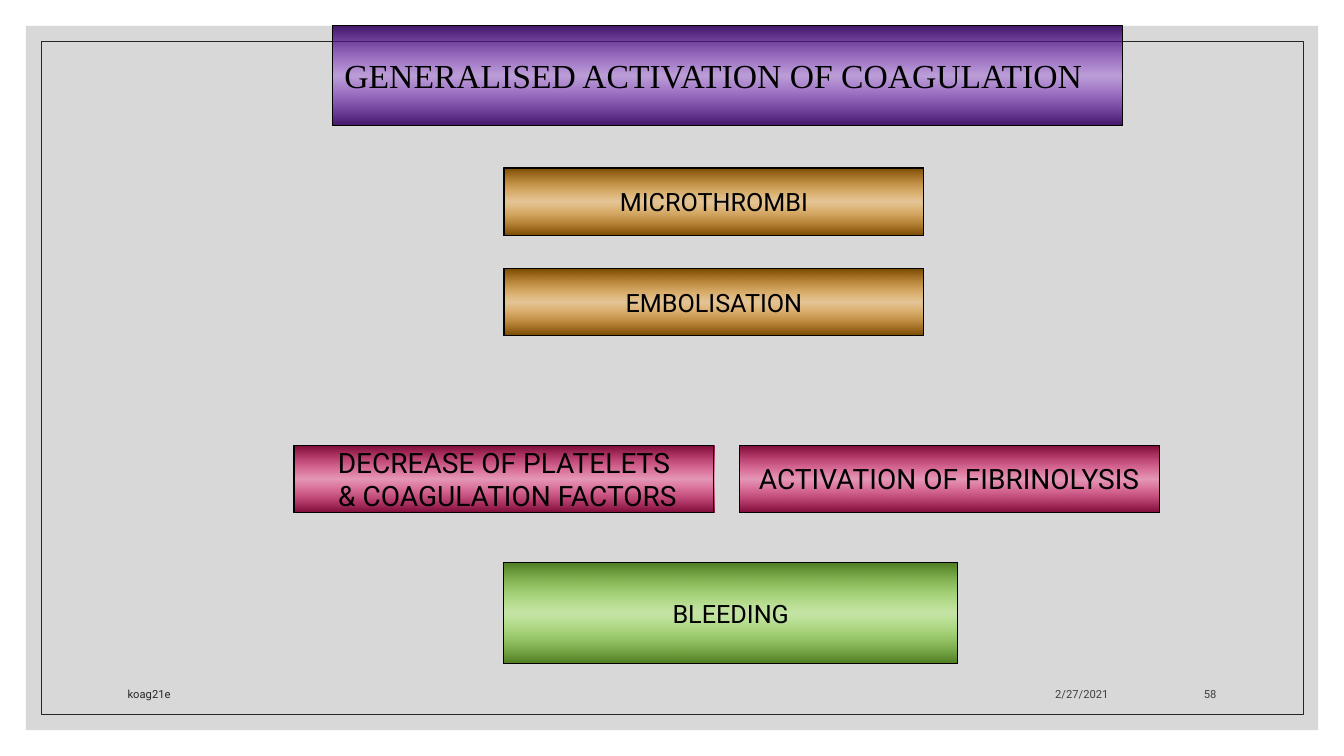
from dataclasses import dataclass

from lxml.etree import SubElement
from pptx import Presentation
from pptx.dml.color import RGBColor
from pptx.enum.shapes import MSO_SHAPE
from pptx.enum.text import MSO_ANCHOR, PP_ALIGN
from pptx.oxml.ns import qn
from pptx.shapes.autoshape import Shape
from pptx.slide import Slide
from pptx.util import Pt

BLACK = RGBColor(0x00, 0x00, 0x00)
DARK_GREY = RGBColor(0x26, 0x26, 0x26)
MID_GREY = RGBColor(0x40, 0x40, 0x40)
PANEL_GREY = RGBColor(0xBF, 0xBF, 0xBF)
PURPLE = RGBColor(0x7D, 0x1A, 0xD5)
PURPLE_EDGE = RGBColor(0x3A, 0x0C, 0x63)
ORANGE = RGBColor(0xFF, 0x99, 0x00)
ORANGE_EDGE = RGBColor(0x76, 0x47, 0x00)
PINK = RGBColor(0xFF, 0x00, 0x66)
PINK_EDGE = RGBColor(0x76, 0x00, 0x2F)
GREEN = RGBColor(0x99, 0xFF, 0x33)
GREEN_EDGE = RGBColor(0x47, 0x76, 0x18)

BODY_FONT = "Roboto"
TITLE_FONT = "Times New Roman"
STEP_WIDTH, STEP_HEIGHT = 300, 48


@dataclass(frozen=True)
class Area:
    left: float
    top: float
    width: float
    height: float


@dataclass(frozen=True)
class Box:
    area: Area
    middle: RGBColor
    edge: RGBColor
    edge_opacity: int = 95
    lines: tuple[str, ...] = ()
    size: float = 18


@dataclass(frozen=True)
class Label:
    area: Area
    text: str
    color: RGBColor
    align: PP_ALIGN = PP_ALIGN.LEFT
    anchor: MSO_ANCHOR = MSO_ANCHOR.BOTTOM
    font: str = BODY_FONT
    size: float = 8


def step(left: float, top: float) -> Area:
    return Area(left, top, STEP_WIDTH, STEP_HEIGHT)


BOXES = [
    Box(Area(360, 402, 324, 72), GREEN, GREEN_EDGE, lines=("BLEEDING",)),
    Box(Area(237.5, 18, 564, 72), PURPLE, PURPLE_EDGE),
    Box(step(360, 120), ORANGE, ORANGE_EDGE, 100, ("MICROTHROMBI",)),
    Box(step(360, 192), ORANGE, ORANGE_EDGE, 100, ("EMBOLISATION",)),
    Box(step(210, 318), PINK, PINK_EDGE,
        lines=("DECREASE OF PLATELETS", " & COAGULATION FACTORS"), size=20),
    Box(step(528, 318), PINK, PINK_EDGE,
        lines=("ACTIVATION OF FIBRINOLYSIS",), size=20),
]

LABELS = [
    Label(Area(239, 36, 554, 36), "GENERALISED ACTIVATION OF COAGULATION",
          BLACK, anchor=MSO_ANCHOR.TOP, font=TITLE_FONT, size=24),
    Label(Area(571.5, 475, 227.5, 29), "2/27/2021", MID_GREY, PP_ALIGN.RIGHT),
    Label(Area(84, 475, 458, 29), "koag21e", DARK_GREY),
    Label(Area(810, 475, 66, 29), "58", MID_GREY, PP_ALIGN.RIGHT),
]


def add_rectangle(slide: Slide, area: Area) -> Shape:
    shape = slide.shapes.add_shape(
        MSO_SHAPE.RECTANGLE, Pt(area.left), Pt(area.top),
        Pt(area.width), Pt(area.height))
    shape.shadow.inherit = False
    return shape


def set_opacity(color_element, percent: int) -> None:
    if percent < 100:
        SubElement(color_element, qn("a:alpha"), val=str(percent * 1000))


def set_gradient(shape: Shape, box: Box) -> None:
    shape.fill.gradient()
    shape.fill.gradient_angle = 270
    stops = shape._element.spPr.find(f"{qn('a:gradFill')}/{qn('a:gsLst')}")
    for stop in list(stops):
        stops.remove(stop)
    for position, color, opacity in (
            (0, box.edge, box.edge_opacity),
            (50, box.middle, 30),
            (100, box.edge, box.edge_opacity)):
        stop = SubElement(stops, qn("a:gs"), pos=str(position * 1000))
        set_opacity(SubElement(stop, qn("a:srgbClr"), val=str(color)), opacity)


def add_box(slide: Slide, box: Box) -> None:
    shape = add_rectangle(slide, box.area)
    set_gradient(shape, box)
    shape.line.color.rgb = BLACK
    shape.line.width = Pt(0.75)
    if not box.lines:
        return
    frame = shape.text_frame
    frame.word_wrap = False
    frame.vertical_anchor = MSO_ANCHOR.MIDDLE
    frame.text = "\n".join(box.lines)
    for paragraph in frame.paragraphs:
        paragraph.alignment = PP_ALIGN.CENTER
        paragraph.font.name = BODY_FONT
        paragraph.font.size = Pt(box.size)
        paragraph.font.color.rgb = BLACK


def add_label(slide: Slide, label: Label) -> None:
    area = label.area
    text_box = slide.shapes.add_textbox(
        Pt(area.left), Pt(area.top), Pt(area.width), Pt(area.height))
    frame = text_box.text_frame
    frame.word_wrap = True
    frame.vertical_anchor = label.anchor
    frame.text = label.text
    paragraph = frame.paragraphs[0]
    paragraph.alignment = label.align
    paragraph.font.name = label.font
    paragraph.font.size = Pt(label.size)
    paragraph.font.color.rgb = label.color


def add_background(slide: Slide) -> None:
    panel = add_rectangle(slide, Area(18.5, 18.5, 923, 503))
    panel.fill.solid()
    panel.fill.fore_color.rgb = PANEL_GREY
    set_opacity(panel._element.spPr.find(qn("a:solidFill"))[0], 60)
    panel.line.fill.background()

    border = add_rectangle(slide, Area(29.5, 29.5, 901.5, 481))
    border.fill.background()
    border.line.color.rgb = DARK_GREY
    border.line.width = Pt(0.5)


def main() -> None:
    presentation = Presentation()
    presentation.slide_width = Pt(960)
    presentation.slide_height = Pt(540)
    slide = presentation.slides.add_slide(presentation.slide_layouts[6])

    # Grey panel with its thin border
    add_background(slide)

    # Gradient boxes of the chain of events
    for box in BOXES:
        add_box(slide, box)

    # Title and footer
    for label in LABELS:
        add_label(slide, label)

    presentation.save("out.pptx")


if __name__ == "__main__":
    main()
